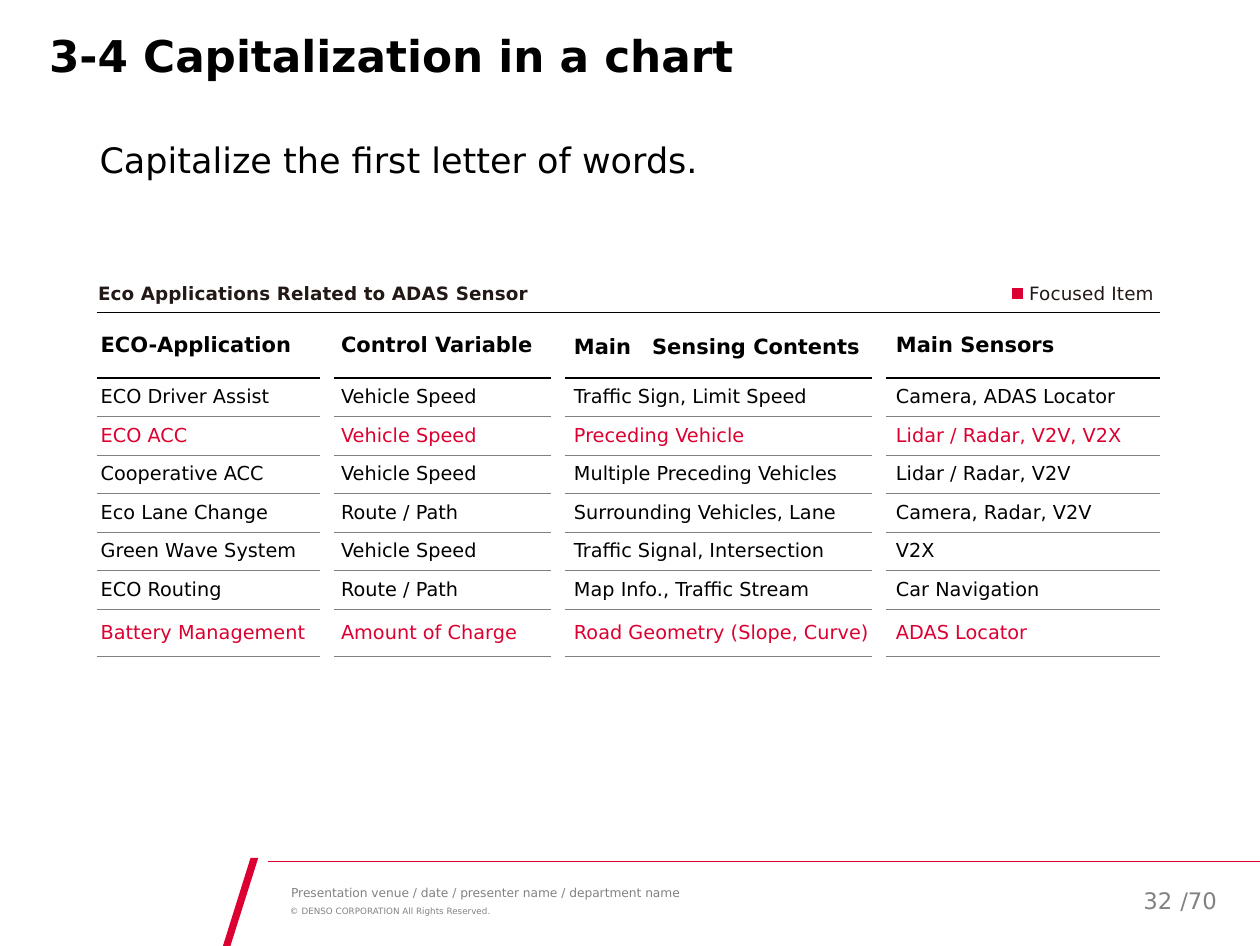
from lxml import etree
from pptx import Presentation
from pptx.dml.color import RGBColor
from pptx.enum import shapes, text
from pptx.oxml import ns
from pptx.util import Pt

FONT = "DejaVu Sans"
BLACK = RGBColor(0x00, 0x00, 0x00)
INK = RGBColor(0x22, 0x18, 0x15)
RED = RGBColor(0xDC, 0x00, 0x32)
GREY = RGBColor(0x82, 0x82, 0x82)
RULE_GREY = RGBColor(0x80, 0x80, 0x80)
WHITE = RGBColor(0xFF, 0xFF, 0xFF)

ROWS = [
    ("ECO-Application", "Control Variable", "Main　Sensing Contents", "Main Sensors"),
    ("ECO Driver Assist", "Vehicle Speed", "Traffic Sign, Limit Speed", "Camera, ADAS Locator"),
    ("ECO ACC", "Vehicle Speed", "Preceding Vehicle", "Lidar / Radar, V2V, V2X"),
    ("Cooperative ACC", "Vehicle Speed", "Multiple Preceding Vehicles", "Lidar / Radar, V2V"),
    ("Eco Lane Change", "Route / Path", "Surrounding Vehicles, Lane", "Camera, Radar, V2V"),
    ("Green Wave System", "Vehicle Speed", "Traffic Signal, Intersection", "V2X"),
    ("ECO Routing", "Route / Path", "Map Info., Traffic Stream", "Car Navigation"),
    ("Battery Management", "Amount of Charge", "Road Geometry (Slope, Curve)", "ADAS Locator"),
]
FOCUSED_ROWS = (2, 7)
COLUMN_WIDTHS = (137.4, 133.1, 184, 153.2)
ROW_HEIGHTS = (37.5, *[22.05] * 6, 27.2)
GAP_CENTERS = (131.3, 263.6, 447.2)


def style(para, size, color, bold=False, spacing=0):
    """Format every run; spacing is in hundredths of a point."""
    for span in para.runs:
        span.font.name = FONT
        span.font.size = Pt(size)
        span.font.bold = bold
        span.font.color.rgb = color
        if spacing:
            span._r.get_or_add_rPr().set("spc", str(spacing))


def set_margins(target, left, top, right, bottom):
    target.margin_left, target.margin_top = Pt(left), Pt(top)
    target.margin_right, target.margin_bottom = Pt(right), Pt(bottom)


def add_label(page, box, words, size, color, bold=False, spacing=0,
              margins=(0, 0, 0, 0), anchor=text.MSO_ANCHOR.TOP, wrap=True):
    frame = page.shapes.add_textbox(*map(Pt, box)).text_frame
    frame.word_wrap = wrap
    frame.vertical_anchor = anchor
    set_margins(frame, *margins)
    frame.text = words
    style(frame.paragraphs[0], size, color, bold, spacing)
    return frame.paragraphs[0]


def add_line(page, start, end, color, width):
    line = page.shapes.add_connector(
        shapes.MSO_CONNECTOR.STRAIGHT, *map(Pt, (*start, *end)))
    line.line.color.rgb = color
    line.line.width = Pt(width)
    etree.SubElement(line._element.spPr, ns.qn("a:effectLst"))


def add_outline(page, points, color):
    points = [(Pt(x), Pt(y)) for x, y in points]
    builder = page.shapes.build_freeform(*points[0])
    builder.add_line_segments(points[1:], close=True)
    outline = builder.convert_to_shape()
    outline.shadow.inherit = False
    outline.fill.solid()
    outline.fill.fore_color.rgb = color
    outline.line.fill.background()


def set_borders(cell, top, bottom):
    """Give each of top and bottom as (color, width); the sides stay open."""
    properties = cell._tc.get_or_add_tcPr()
    for tag, border in (("lnL", None), ("lnR", None), ("lnT", top), ("lnB", bottom)):
        line = etree.SubElement(properties, ns.qn(f"a:{tag}"))
        if border is None:
            etree.SubElement(line, ns.qn("a:noFill"))
            continue
        color, width = border
        line.set("w", str(Pt(width)))
        fill = etree.SubElement(line, ns.qn("a:solidFill"))
        etree.SubElement(fill, ns.qn("a:srgbClr")).set("val", str(color))


def add_footer(page, left, top, width, height):
    right, bottom = left + width, top + height
    add_line(page, (left + 25.7, top + 2.2), (right, top + 2.2), RED, 0.5)
    add_outline(page, [(left + 20.2, top), (left + 15.8, top),
                       (left, bottom), (left + 4.3, bottom)], RED)
    add_label(page, (left + 37.6, top + 15.9, 453.6, 8.6),
              "Presentation venue / date / presenter name / department name",
              7, GREY, margins=(1.4, 0, 0, 0))
    add_label(page, (left + 37.6, top + 27.4, 453.6, 5.8),
              "© DENSO CORPORATION All Rights Reserved.",
              5, GREY, margins=(0.7, 0, 0, 0))
    number = dict(size=13, color=GREY, margins=(7.2, 3.6, 7.2, 3.6),
                  anchor=text.MSO_ANCHOR.MIDDLE)
    add_label(page, (right - 52.6, top + 13, 37.4, 23), "/70", wrap=False, **number)
    current = add_label(page, (right - 119.5, top + 10.1, 80.6, 28.8), "32 ", **number)
    current.alignment = text.PP_ALIGN.RIGHT


def add_heading(page, left, top, width):
    add_label(page, (left, top, width, 28.1), "3-4 Capitalization in a chart",
              25, BLACK, bold=True, margins=(28.1, 0, 113, 0))
    add_label(page, (left, top + 59, width, 387.4),
              "Capitalize the first letter of words.",
              20, BLACK, margins=(56.9, 3.6, 51.1, 3.6))


def add_caption(page, left, top, width):
    right = left + width
    add_label(page, (right - 75.6, top, 75.6, 13), "Focused Item",
              10.5, INK, spacing=10, margins=(0.7, 0, 0, 0))
    x, y, side = right - 84.6, top + 3.6, 6.2
    add_outline(page, [(x, y), (x + side, y), (x + side, y + side), (x, y + side)], RED)
    add_label(page, (left, top, 250, 13), "Eco Applications Related to ADAS Sensor",
              10.5, INK, bold=True, spacing=12, margins=(0.7, 0, 0, 0))


def add_eco_table(page, left, top):
    width, height = sum(COLUMN_WIDTHS), sum(ROW_HEIGHTS)
    table = page.shapes.add_table(
        len(ROWS), len(COLUMN_WIDTHS), *map(Pt, (left, top, width, height))).table
    table.first_row = table.horz_banding = False
    for column, column_width in zip(table.columns, COLUMN_WIDTHS):
        column.width = Pt(column_width)
    heavy, light = (BLACK, 1), (RULE_GREY, 0.25)
    for index, words in enumerate(ROWS):
        table.rows[index].height = Pt(ROW_HEIGHTS[index])
        header = index == 0
        for cell, entry in zip(table.rows[index].cells, words):
            cell.text = entry
            cell.vertical_anchor = text.MSO_ANCHOR.MIDDLE
            set_margins(cell, 2.2, 2.9, 0, 2.9)
            style(cell.text_frame.paragraphs[0], 12 if header else 11,
                  RED if index in FOCUSED_ROWS else BLACK, bold=header)
            set_borders(cell, heavy if index < 2 else light, heavy if header else light)
            cell.fill.background()
    for center in GAP_CENTERS:
        x = left + center
        add_line(page, (x, top + 6.5), (x, top + height + 2), WHITE, 8)


def main():
    deck = Presentation()
    deck.slide_width, deck.slide_height = Pt(720), Pt(540.7)
    page = deck.slides.add_slide(deck.slide_layouts[6])
    add_footer(page, 127.4, 490.3, 592.6, 50.4)
    add_heading(page, 0, 16.5, 720)
    add_eco_table(page, 55.3, 178.5)
    add_caption(page, 55.3, 161.3, 607.7)
    deck.save("out.pptx")


if __name__ == "__main__":
    main()
